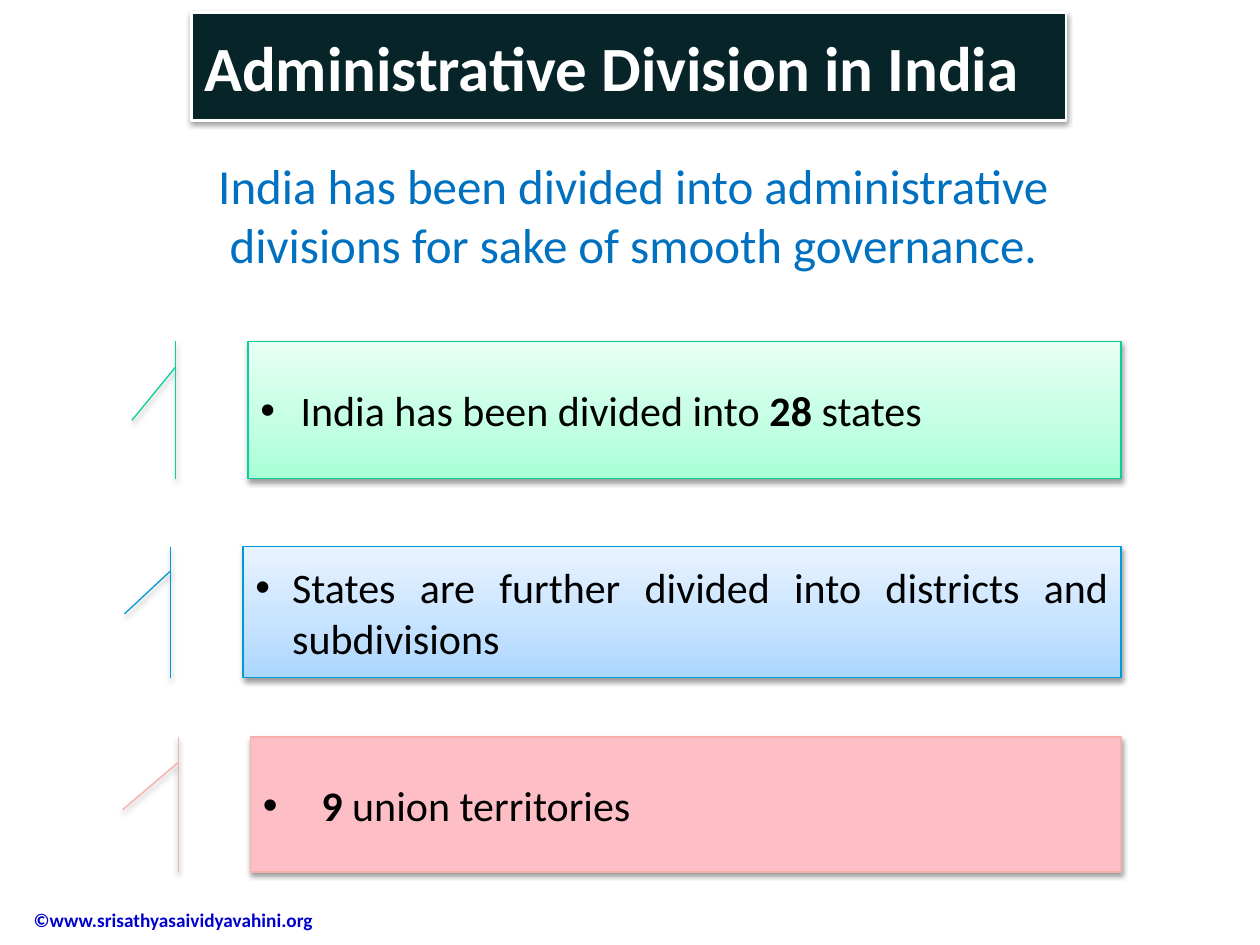
"""Build the slide on the administrative division of India."""
from copy import deepcopy
from dataclasses import dataclass

from lxml import etree
from pptx import Presentation
from pptx.dml.color import RGBColor
from pptx.enum.shapes import MSO_SHAPE
from pptx.enum.text import MSO_ANCHOR, MSO_AUTO_SIZE, PP_ALIGN
from pptx.oxml.ns import qn
from pptx.util import Cm, Pt

CALLOUT = MSO_SHAPE.LINE_CALLOUT_1_BORDER_AND_ACCENT_BAR
MIDDLE = MSO_ANCHOR.MIDDLE
NO_FIT = MSO_AUTO_SIZE.NONE
LEFT, CENTER, JUSTIFY = PP_ALIGN.LEFT, PP_ALIGN.CENTER, PP_ALIGN.JUSTIFY


@dataclass(frozen=True)
class Theme:
    font: str = "Calibri"
    title_size: int = 36
    intro_size: int = 28
    body_size: int = 24
    credit_size: int = 11
    white: str = "FFFFFF"
    black: str = "000000"
    scroll: str = "072428"
    intro: str = "0070C0"
    credit: str = "0000CC"
    green: tuple = ("A6FFD7", "C0FFE2", "E7FFF4")
    green_line: str = "0BCF9A"
    blue: tuple = ("ABD6FF", "C3E1FF", "E8F3FF")
    blue_line: str = "009AD4"
    pink: tuple = ("FDBFC5",)
    pink_line: str = "F9AFA9"


def write(shape, runs, size, color, align, bold=None):
    frame = shape.text_frame
    frame.word_wrap = True
    frame.auto_size = NO_FIT
    frame.vertical_anchor = MIDDLE
    paragraph = frame.paragraphs[0]
    paragraph.alignment = align
    for text, run_bold in runs:
        run = paragraph.add_run()
        run.text = text
        if run_bold:
            run.font.bold = True
    font = paragraph.font
    font.name, font.size, font.bold = theme.font, Pt(size), bold
    font.color.rgb = RGBColor.from_string(color)
    return paragraph


def outline_with_shadow(shape, color, width):
    shape.line.color.rgb = RGBColor.from_string(color)
    shape.line.width = Pt(width)
    shape.shadow.inherit = False
    effects = shape._element.spPr.find(qn("a:effectLst"))
    shadow = etree.SubElement(effects, qn("a:outerShdw"), blurRad=str(Pt(3.1)),
                              dist=str(Pt(1.6)), dir="5400000", rotWithShape="0")
    shade = etree.SubElement(shadow, qn("a:srgbClr"), val=theme.black)
    etree.SubElement(shade, qn("a:alpha"), val="38000")


theme = Theme()
prs = Presentation()
prs.slide_width, prs.slide_height = Cm(25.4), Cm(19.05)
slide = prs.slides.add_slide(prs.slide_layouts[5])

title = slide.shapes.title
title.left, title.top, title.width, title.height = Cm(3.86), Cm(0.25), Cm(17.63), Cm(2.18)
scroll = etree.SubElement(title._element.spPr, qn("a:prstGeom"), prst="horizontalScroll")
etree.SubElement(scroll, qn("a:avLst"))
title.fill.solid()
title.fill.fore_color.rgb = RGBColor.from_string(theme.scroll)
outline_with_shadow(title, theme.white, 1.5)
write(title, [("Administrative Division in India", False)],
      theme.title_size, theme.white, LEFT, True)

intro = slide.shapes.add_textbox(Cm(2.77), Cm(3), Cm(19.99), Cm(2.64))
write(intro, [("India has been divided into administrative divisions "
               "for sake of smooth governance.", False)],
      theme.intro_size, theme.intro, CENTER)

facts = [
    (5, 6.88, 2.77, theme.green, theme.green_line, (0.576, -0.133), 0.81, LEFT,
     [("India has been divided into ", False), ("28 ", True), ("states", False)]),
    (4.9, 11.02, 2.64, theme.blue, theme.blue_line, (0.514, -0.135), 0.74, JUSTIFY,
     [("States are further divided into districts and subdivisions", False)]),
    (5.05, 14.86, 2.72, theme.pink, theme.pink_line, (0.539, -0.147), 1.18, LEFT,
     [("9", True), (" union territories", False)]),
]
right_edge = 22.6
for left, top, height, fills, line, pointer, indent, align, runs in facts:
    fact = slide.shapes.add_shape(CALLOUT, Cm(left), Cm(top),
                                  Cm(right_edge - left), Cm(height))
    for index, value in enumerate((0.188, -0.083, *pointer)):
        fact.adjustments[index] = value
    if len(fills) == 1:
        fact.fill.solid()
        fact.fill.fore_color.rgb = RGBColor.from_string(fills[0])
    else:
        fact.fill.gradient()
        fact.fill.gradient_angle = 90
        stops = fact._element.spPr.find(".//" + qn("a:gsLst"))
        stops.insert(1, deepcopy(stops[0]))
        for stop, position, color in zip(fact.fill.gradient_stops, (0, 0.35, 1), fills):
            stop.position = position
            stop.color.rgb = RGBColor.from_string(color)
    outline_with_shadow(fact, line, 0.75)
    properties = fact.text_frame.paragraphs[0]._p.get_or_add_pPr()
    properties.set("marL", str(Cm(indent)))
    properties.set("indent", str(-Cm(indent)))
    etree.SubElement(properties, qn("a:buFont"), typeface="Arial")
    etree.SubElement(properties, qn("a:buChar"), char="•")
    write(fact, runs, theme.body_size, theme.black, align)

credit = slide.shapes.add_textbox(Cm(0.43), Cm(18.03), Cm(6.4), Cm(1.02))
write(credit, [("©www.srisathyasaividyavahini.org", False)],
      theme.credit_size, theme.credit, LEFT, True)

prs.save("out.pptx")
